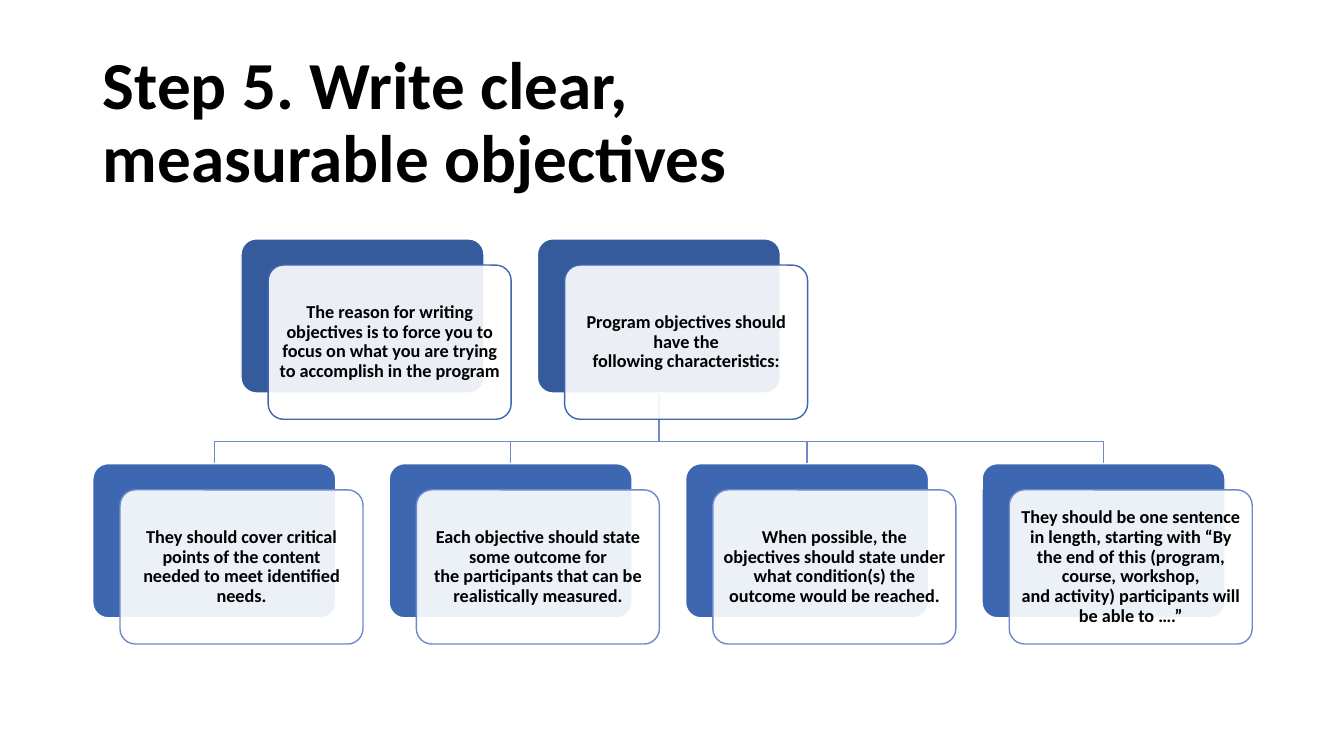
from dataclasses import dataclass

from lxml.etree import SubElement
from pptx import Presentation
from pptx.dml.color import RGBColor
from pptx.enum.shapes import MSO_SHAPE
from pptx.enum.text import MSO_ANCHOR, MSO_AUTO_SIZE, PP_ALIGN
from pptx.oxml.ns import qn
from pptx.shapes.autoshape import Shape
from pptx.slide import Slide
from pptx.text.text import TextFrame
from pptx.util import Inches, Pt

NBSP = chr(160)  # keeps two words on the same line

# Grid, in inches
GRID_LEFT, GRID_TOP = 0.92, 2.37
COLUMN_STEP, ROW_STEP = 2.94, 2.23
CARD_WIDTH, CARD_HEIGHT = 2.41, 1.53
FRONT_SHIFT_X, FRONT_SHIFT_Y = 0.27, 0.26
BUS_Y = 4.38

TOP_BLUE, MIDDLE_BLUE, LIGHT_BLUE = "365B9D", "3E67B2", "6D89CB"
WHITE, BLACK = "FFFFFF", "000000"


@dataclass(frozen=True)
class Card:
    column: float
    row: int
    text: str

    @property
    def left(self) -> float:
        return GRID_LEFT + self.column * COLUMN_STEP

    @property
    def top(self) -> float:
        return GRID_TOP + self.row * ROW_STEP

    @property
    def center(self) -> float:
        return self.left + CARD_WIDTH / 2


REASON = Card(0.5, 0, "The reason for writing objectives is to force you to "
              f"focus{NBSP}on what you are trying to accomplish in the program")
CHARACTERISTICS = Card(1.5, 0, "Program objectives should have the "
                       f"following{NBSP}characteristics:")
CHILD_TEXTS = (
    f"They should cover critical points of the content needed{NBSP}to meet "
    "identified needs.",
    f"Each objective should state some outcome for the{NBSP}participants that "
    "can be realistically measured.",
    f"When possible, the objectives should state under what{NBSP}condition(s) "
    "the outcome would be reached.",
    f"They should be one sentence in length, starting with{NBSP}“By the end of "
    f"this (program, course, workshop, and{NBSP}activity) participants will be "
    "able to ….”",
)
CHILDREN = [Card(column, 1, text) for column, text in enumerate(CHILD_TEXTS)]


def color(value: str) -> RGBColor:
    return RGBColor.from_string(value)


def style_line(shape: Shape, value: str) -> None:
    shape.shadow.inherit = False
    shape.line.color.rgb = color(value)
    shape.line.width = Pt(1)


def write_text(frame: TextFrame, text: str, size: int, align: PP_ALIGN) -> None:
    frame.word_wrap = True
    frame.auto_size = MSO_AUTO_SIZE.NONE
    frame.vertical_anchor = MSO_ANCHOR.MIDDLE
    paragraph = frame.paragraphs[0]
    paragraph.alignment = align
    paragraph.line_spacing = 0.9
    run = paragraph.add_run()
    run.text = text
    run.font.name = "Calibri"
    run.font.size = Pt(size)
    run.font.bold = True
    run.font.color.rgb = color(BLACK)


def add_panel(slide: Slide, left: float, top: float, fill: str, line: str) -> Shape:
    panel = slide.shapes.add_shape(
        MSO_SHAPE.ROUNDED_RECTANGLE, Inches(left), Inches(top),
        Inches(CARD_WIDTH), Inches(CARD_HEIGHT))
    panel.adjustments[0] = 0.1
    panel.fill.solid()
    panel.fill.fore_color.rgb = color(fill)
    style_line(panel, line)
    return panel


def add_card(slide: Slide, card: Card) -> None:
    back, edge = ((TOP_BLUE, MIDDLE_BLUE), (MIDDLE_BLUE, LIGHT_BLUE))[card.row]
    add_panel(slide, card.left, card.top, back, WHITE)
    front = add_panel(slide, card.left + FRONT_SHIFT_X,
                      card.top + FRONT_SHIFT_Y, WHITE, edge)
    # Slightly transparent white lets the back panel show through
    fill_color = front.fill._xPr.find(qn("a:solidFill"))[0]
    SubElement(fill_color, qn("a:alpha"), val="90000")
    frame = front.text_frame
    frame.margin_left = frame.margin_right = Inches(0.05)
    frame.margin_top = frame.margin_bottom = Inches(0.05)
    write_text(frame, card.text, 13, PP_ALIGN.CENTER)


def add_branch(slide: Slide, parent: Card, child: Card) -> None:
    builder = slide.shapes.build_freeform(
        Inches(parent.center), Inches(parent.top + CARD_HEIGHT))
    corners = ((parent.center, BUS_Y), (child.center, BUS_Y),
               (child.center, child.top))
    builder.add_line_segments(
        [(Inches(x), Inches(y)) for x, y in corners], close=False)
    branch = builder.convert_to_shape()
    branch.fill.background()
    style_line(branch, LIGHT_BLUE)


def main() -> None:
    presentation = Presentation()
    presentation.slide_width = Inches(13.33)
    presentation.slide_height = Inches(7.5)
    slide = presentation.slides.add_slide(presentation.slide_layouts[5])

    # Title
    title = slide.shapes.title
    title.left, title.top = Inches(GRID_LEFT), Inches(0.61)
    title.width, title.height = Inches(11.5), Inches(1.24)
    write_text(title.text_frame,
               f"Step 5. Write clear, measurable{NBSP}objectives", 48, PP_ALIGN.LEFT)

    # Branches lie behind the cards
    for child in reversed(CHILDREN):
        add_branch(slide, CHARACTERISTICS, child)

    # Cards
    for card in (REASON, CHARACTERISTICS, *CHILDREN):
        add_card(slide, card)

    presentation.save("out.pptx")


if __name__ == "__main__":
    main()
